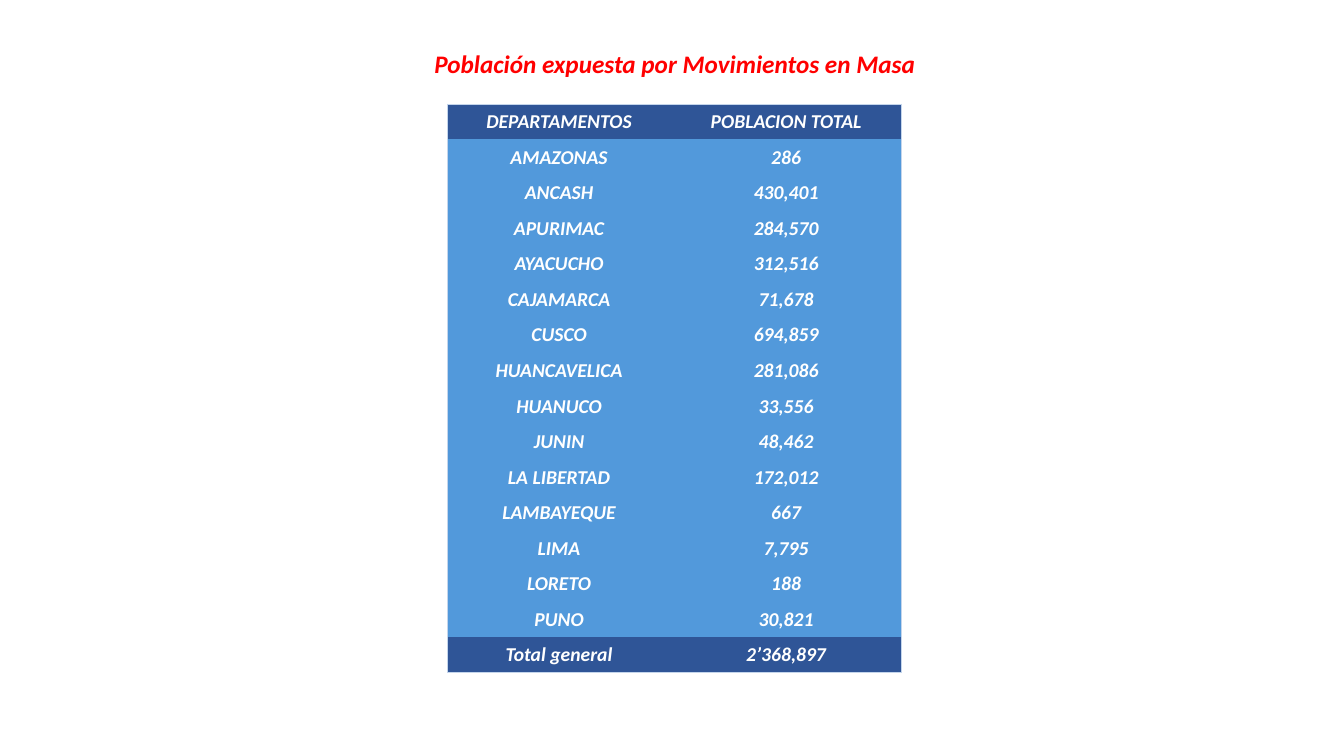
from lxml import etree
from pptx import Presentation
from pptx.dml.color import RGBColor
from pptx.enum import text
from pptx.oxml import ns
from pptx.util import Pt

COLORS = {
    "title": "FF0000",
    "text": "FFFFFF",
    "band": "2F5597",
    "body": "5299DB",
    "border": "C4D5EB",
}
NO_STYLE_NO_GRID = "{2D5ABB26-0587-4C30-8999-92F81FD0307C}"
ROWS = [
    ("DEPARTAMENTOS", "POBLACION TOTAL"),
    ("AMAZONAS", "286"),
    ("ANCASH", "430,401"),
    ("APURIMAC", "284,570"),
    ("AYACUCHO", "312,516"),
    ("CAJAMARCA", "71,678"),
    ("CUSCO", "694,859"),
    ("HUANCAVELICA", "281,086"),
    ("HUANUCO", "33,556"),
    ("JUNIN", "48,462"),
    ("LA LIBERTAD", "172,012"),
    ("LAMBAYEQUE", "667"),
    ("LIMA", "7,795"),
    ("LORETO", "188"),
    ("PUNO", "30,821"),
    ("Total general", "2’368,897"),
]
ROW_HEIGHT = 25.38
COLUMN_WIDTHS = (159.3, 165.2)


def format_paragraph(paragraph, size, color):
    paragraph.alignment = text.PP_ALIGN.CENTER
    font = paragraph.font
    font.name, font.size = "Calibri", Pt(size)
    font.bold = font.italic = True
    font.color.rgb = RGBColor.from_string(COLORS[color])


def add_border(cell, side):
    line = etree.SubElement(cell._tc.get_or_add_tcPr(), ns.qn(f"a:ln{side}"), w=str(Pt(0.5)))
    fill = etree.SubElement(line, ns.qn("a:solidFill"))
    etree.SubElement(fill, ns.qn("a:srgbClr"), val=COLORS["border"])


presentation = Presentation()
presentation.slide_width, presentation.slide_height = Pt(960), Pt(540)
slide = presentation.slides.add_slide(presentation.slide_layouts[5])

title = slide.shapes.title
title.left, title.top, title.width, title.height = Pt(301), Pt(31), Pt(362), Pt(29)
title.text_frame.text = "Población expuesta por Movimientos en Masa"
title.text_frame.word_wrap = False
title.text_frame.auto_size = text.MSO_AUTO_SIZE.SHAPE_TO_FIT_TEXT
title.text_frame.vertical_anchor = text.MSO_ANCHOR.TOP
format_paragraph(title.text_frame.paragraphs[0], 18, "title")

table = slide.shapes.add_table(
    len(ROWS), len(COLUMN_WIDTHS), Pt(319.7), Pt(74.2),
    Pt(sum(COLUMN_WIDTHS)), Pt(ROW_HEIGHT * len(ROWS)),
).table
table.horz_banding = False
table._tbl.tblPr.find(ns.qn("a:tableStyleId")).text = NO_STYLE_NO_GRID
for column, width in zip(table.columns, COLUMN_WIDTHS):
    column.width = Pt(width)

last_row = len(ROWS) - 1
for row_index, values in enumerate(ROWS):
    table.rows[row_index].height = Pt(ROW_HEIGHT)
    for column_index, value in enumerate(values):
        cell = table.cell(row_index, column_index)
        cell.text = value
        cell.vertical_anchor = text.MSO_ANCHOR.MIDDLE
        cell.margin_left = cell.margin_right = cell.margin_top = Pt(0.7)
        cell.margin_bottom = Pt(0)
        format_paragraph(cell.text_frame.paragraphs[0], 14, "text")
        add_border(cell, "LR"[column_index])
        if row_index == 0:
            add_border(cell, "T")
        if row_index == last_row:
            add_border(cell, "B")
        cell.fill.solid()
        fill_name = "band" if row_index in (0, last_row) else "body"
        cell.fill.fore_color.rgb = RGBColor.from_string(COLORS[fill_name])

presentation.save("out.pptx")
